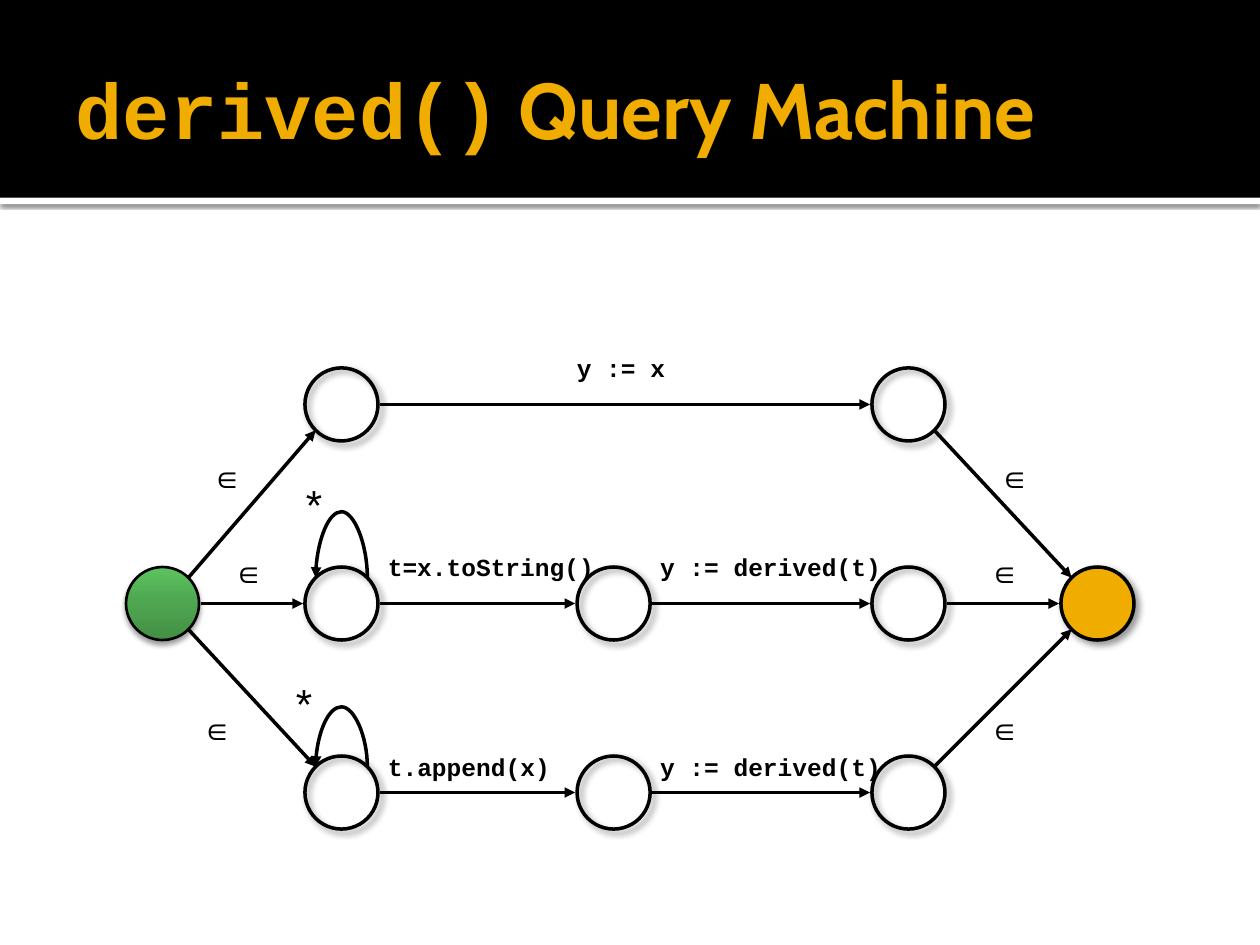
from math import sqrt

from lxml.etree import SubElement
from pptx import Presentation
from pptx.dml.color import RGBColor
from pptx.enum.shapes import MSO_CONNECTOR, MSO_SHAPE
from pptx.enum.text import MSO_ANCHOR, PP_ALIGN
from pptx.oxml.ns import qn
from pptx.util import Emu, Inches, Pt

COLORS = {"black": "000000", "white": "FFFFFF", "gold": "F0AD00"}
GREENS = [(0, "438F45"), (55, "4FA851"), (100, "5CC35F")]
TITLE = [("derived()", "Courier New"), (" Query Machine", "Cabin")]
DIAMETER = 0.58
RADIUS = DIAMETER / 2
GAP = 0.015
COLUMNS = {"start": 1.29, "first": 2.71, "second": 4.87, "third": 7.21, "end": 8.71}
ROWS = {"top": 3.21, "middle": 4.79, "bottom": 6.29}
NODES = [
    ("start", "middle"),
    ("first", "top"), ("first", "middle"), ("first", "bottom"),
    ("second", "middle"), ("second", "bottom"),
    ("third", "middle"), ("third", "bottom"), ("third", "top"),
    ("end", "middle"),
]
EDGES = [
    (("start", "middle"), ("first", "top")),
    (("start", "middle"), ("first", "bottom")),
    (("start", "middle"), ("first", "middle")),
    (("first", "middle"), ("second", "middle")),
    (("second", "middle"), ("third", "middle")),
    (("third", "middle"), ("end", "middle")),
    (("first", "bottom"), ("second", "bottom")),
    (("second", "bottom"), ("third", "bottom")),
    (("third", "bottom"), ("end", "middle")),
    (("first", "top"), ("third", "top")),
    (("third", "top"), ("end", "middle")),
]
LOOPS = [(("first", "middle"), -332), (("first", "bottom"), -301)]
LABEL_STYLES = {
    "member": ("Arial", 18, False, 0.4),
    "code": ("Courier New", 14, True, 0.34),
    "star": ("Arial", 24, False, 0.5),
}
LABELS = [
    ("member", "∈", 0.42, [(1.58, 3.58), (1.5, 5.58), (1.75, 4.33),
                           (7.83, 3.58), (7.75, 4.33), (7.75, 5.58)]),
    ("code", "t=x.toString()", 2.33, [(2.98, 4.33)]),
    ("code", "t.append(x)", 2.02, [(2.98, 5.92)]),
    ("code", "y := x", 1.17, [(4.48, 2.75)]),
    ("code", "y := derived(t)", 2.44, [(5.14, 4.33), (5.14, 5.92)]),
    ("star", "*", 0.5, [(2.33, 3.75), (2.25, 5.33)]),
]


def color(name):
    return RGBColor.from_string(COLORS[name])


def add_shadow(shape, alpha, blur, distance, angle):
    shape.shadow.inherit = False
    effects = shape._element.spPr.find(qn("a:effectLst"))
    shadow = SubElement(effects, qn("a:outerShdw"), blurRad=str(Pt(blur)),
                        dist=str(Pt(distance)), dir=str(angle * 60000),
                        algn="tl", rotWithShape="0")
    tint = SubElement(shadow, qn("a:srgbClr"), val=COLORS["black"])
    SubElement(tint, qn("a:alpha"), val=str(alpha * 1000))


def add_band(page, top, height, fill):
    band = page.shapes.add_shape(MSO_SHAPE.RECTANGLE, 0, Inches(top), Inches(10), Inches(height))
    band.shadow.inherit = False
    band.fill.solid()
    band.fill.fore_color.rgb = color(fill)
    band.line.fill.background()
    return band


def add_span(para, text, font, size, bold, tint):
    span = para.add_run()
    span.text = text
    span.font.name = font
    span.font.size = Pt(size)
    span.font.bold = bold
    span.font.color.rgb = color(tint)


def fill_green(shape):
    shape.fill.gradient()
    shape.fill.gradient_angle = 90
    stops = shape._element.spPr.find(".//" + qn("a:gsLst"))
    stops.clear()
    for position, value in GREENS:
        stop = SubElement(stops, qn("a:gs"), pos=str(position * 1000))
        SubElement(stop, qn("a:srgbClr"), val=value)


def add_node(page, column, row):
    node = page.shapes.add_shape(
        MSO_SHAPE.OVAL, Inches(COLUMNS[column] - RADIUS), Inches(ROWS[row] - RADIUS),
        Inches(DIAMETER), Inches(DIAMETER))
    node.line.color.rgb = color("black")
    node.line.width = Pt(1.5 if column == "start" else 2)
    if column == "start":
        fill_green(node)
        add_shadow(node, 38, 3.1, 2, 90)
        return node
    if column == "end":
        node.fill.solid()
        node.fill.fore_color.rgb = color("gold")
    else:
        node.fill.background()
    add_shadow(node, 40, 4, 3, 45)
    return node


def add_arrow(page, kind, start, end):
    arrow = page.shapes.add_connector(kind, *(Inches(value) for value in start + end))
    arrow.line.color.rgb = color("black")
    arrow.line.width = Pt(2)
    SubElement(arrow.line._get_or_add_ln(), qn("a:tailEnd"), type="triangle")
    SubElement(arrow._element.spPr, qn("a:effectLst"))
    return arrow


def add_edge(page, source, target):
    x1, y1 = COLUMNS[source[0]], ROWS[source[1]]
    x2, y2 = COLUMNS[target[0]], ROWS[target[1]]
    across, down = RADIUS + GAP, 0
    if y1 != y2:
        across = RADIUS / sqrt(2)
        down = across if y2 > y1 else -across
    add_arrow(page, MSO_CONNECTOR.STRAIGHT, (x1 + across, y1 + down), (x2 - across, y2 - down))


def add_loop(page, place, node, bend):
    x, y = COLUMNS[place[0]], ROWS[place[1]]
    reach = RADIUS / sqrt(2)
    loop = add_arrow(page, MSO_CONNECTOR.CURVE, (x, y - 2 * reach), (x, y))
    loop.width = Emu(1588)
    loop.rotation = 270
    frame = loop._element.spPr.find(qn("a:xfrm"))
    frame.set("flipH", "1")
    frame.set("flipV", "1")
    guides = loop._element.spPr.find(qn("a:prstGeom")).find(qn("a:avLst"))
    SubElement(guides, qn("a:gd"), name="adj1", fmla=f"val {bend * 100000}")
    links = loop._element.find(".//" + qn("p:cNvCxnSpPr"))
    for tag, site in (("a:stCxn", 7), ("a:endCxn", 1)):
        SubElement(links, qn(tag), id=str(node.shape_id), idx=str(site))


def add_label(page, style, text, width, left, top):
    font, size, bold, height = LABEL_STYLES[style]
    box = page.shapes.add_textbox(Inches(left), Inches(top), Inches(width), Inches(height))
    box.text_frame.word_wrap = True
    add_span(box.text_frame.paragraphs[0], text, font, size, bold, "black")


def add_title(page):
    title = page.shapes.title
    title.left, title.top, title.width, title.height = map(Inches, (0.5, 0.17, 9, 1.37))
    frame = title.text_frame
    frame.vertical_anchor = MSO_ANCHOR.MIDDLE
    frame.word_wrap = True
    frame.margin_left = Inches(0.1)
    frame.margin_right = frame.margin_top = frame.margin_bottom = Inches(0.05)
    para = frame.paragraphs[0]
    para.alignment = PP_ALIGN.LEFT
    for text, font in TITLE:
        add_span(para, text, font, 45, True, "gold")
    page.shapes._spTree.append(title._element)


def main():
    """Build the query machine slide."""
    deck = Presentation()
    deck.slide_width, deck.slide_height = Inches(10), Inches(7.5)
    page = deck.slides.add_slide(deck.slide_layouts[5])
    add_shadow(add_band(page, 1.57, 0.05, "white"), 60, 2.5, 0.8, 90)
    add_band(page, 0, 1.57, "black")
    add_title(page)
    nodes = {place: add_node(page, *place) for place in NODES}
    for source, target in EDGES:
        add_edge(page, source, target)
    for place, bend in LOOPS:
        add_loop(page, place, nodes[place], bend)
    for style, text, width, spots in LABELS:
        for left, top in spots:
            add_label(page, style, text, width, left, top)
    deck.save("out.pptx")


if __name__ == "__main__":
    main()
